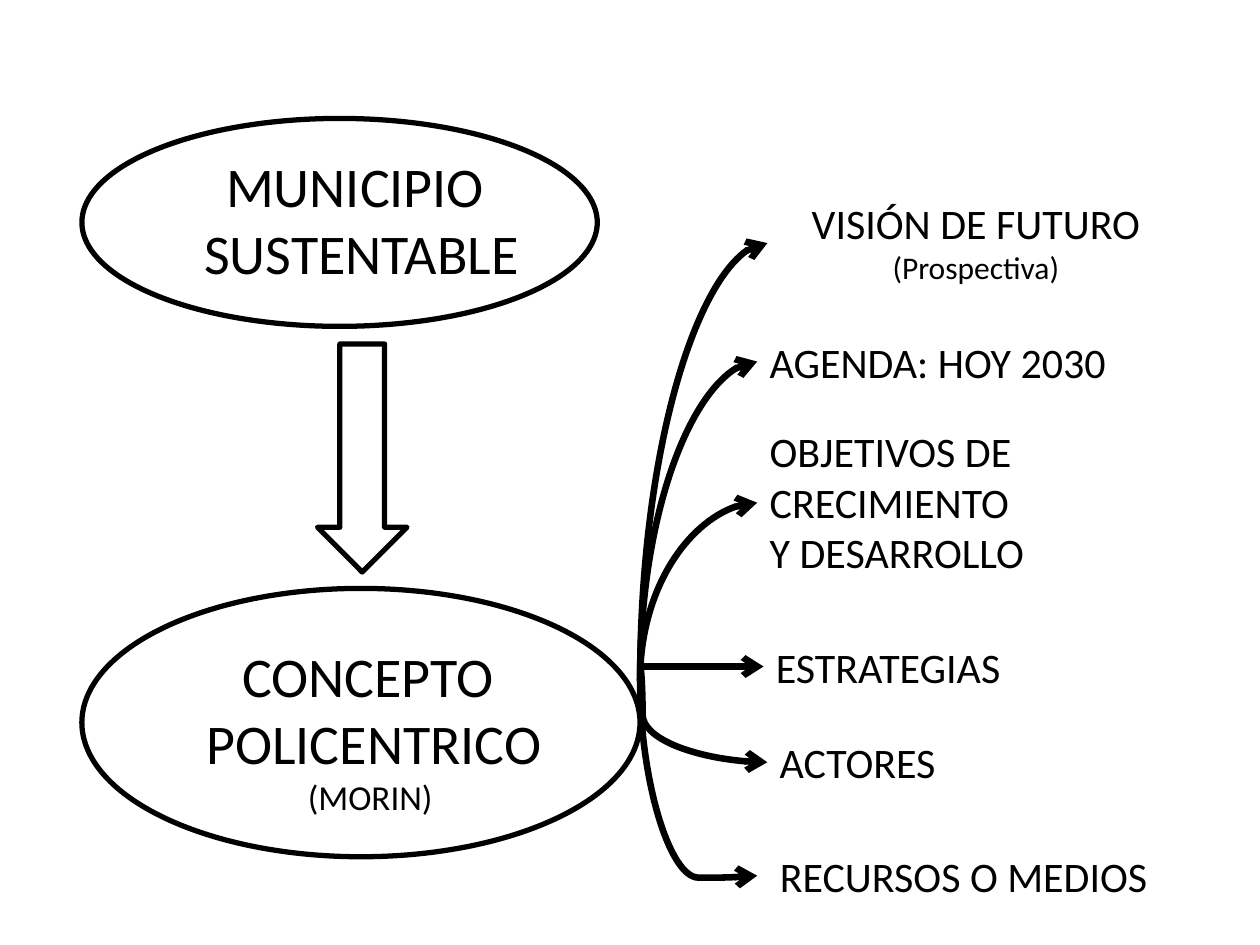
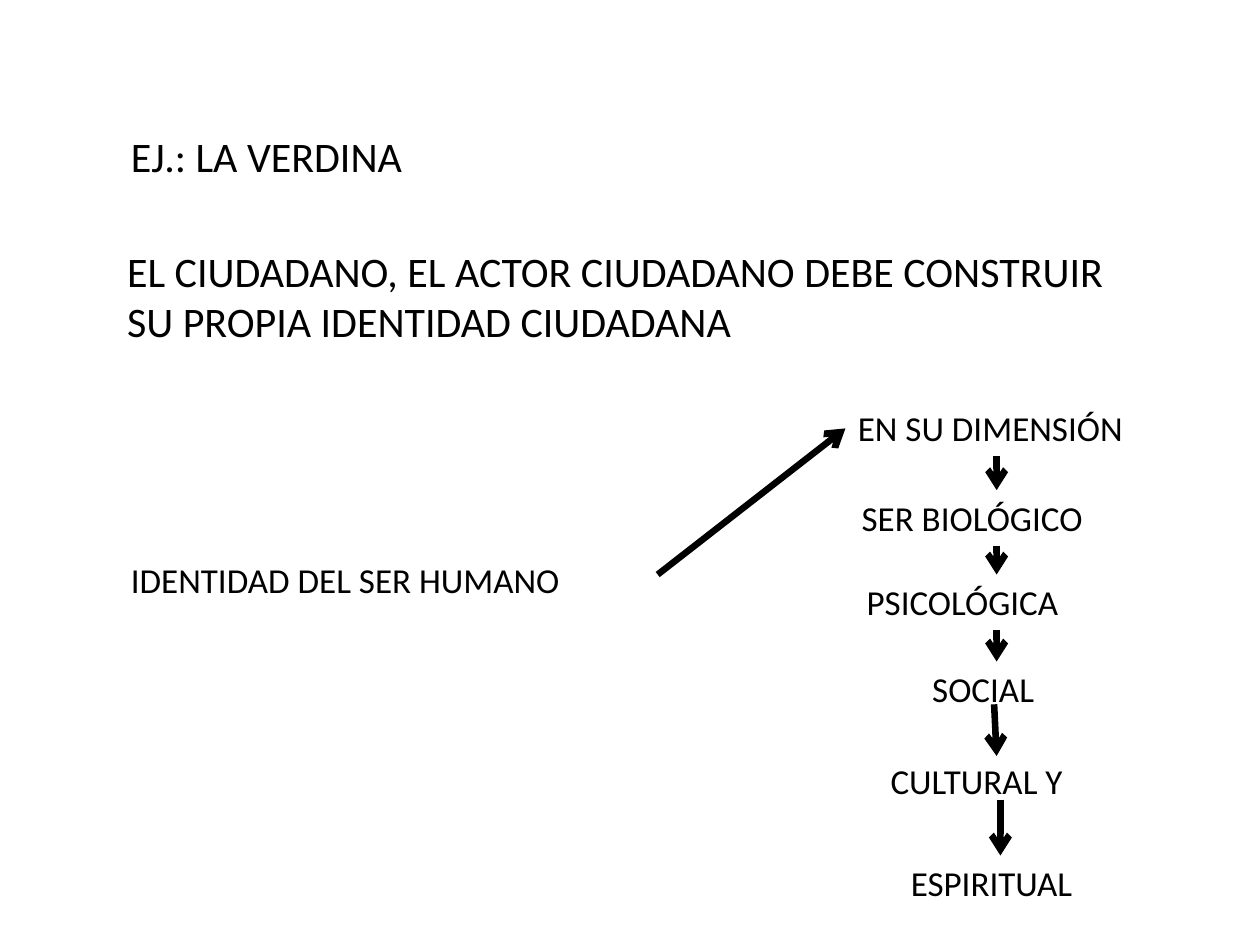
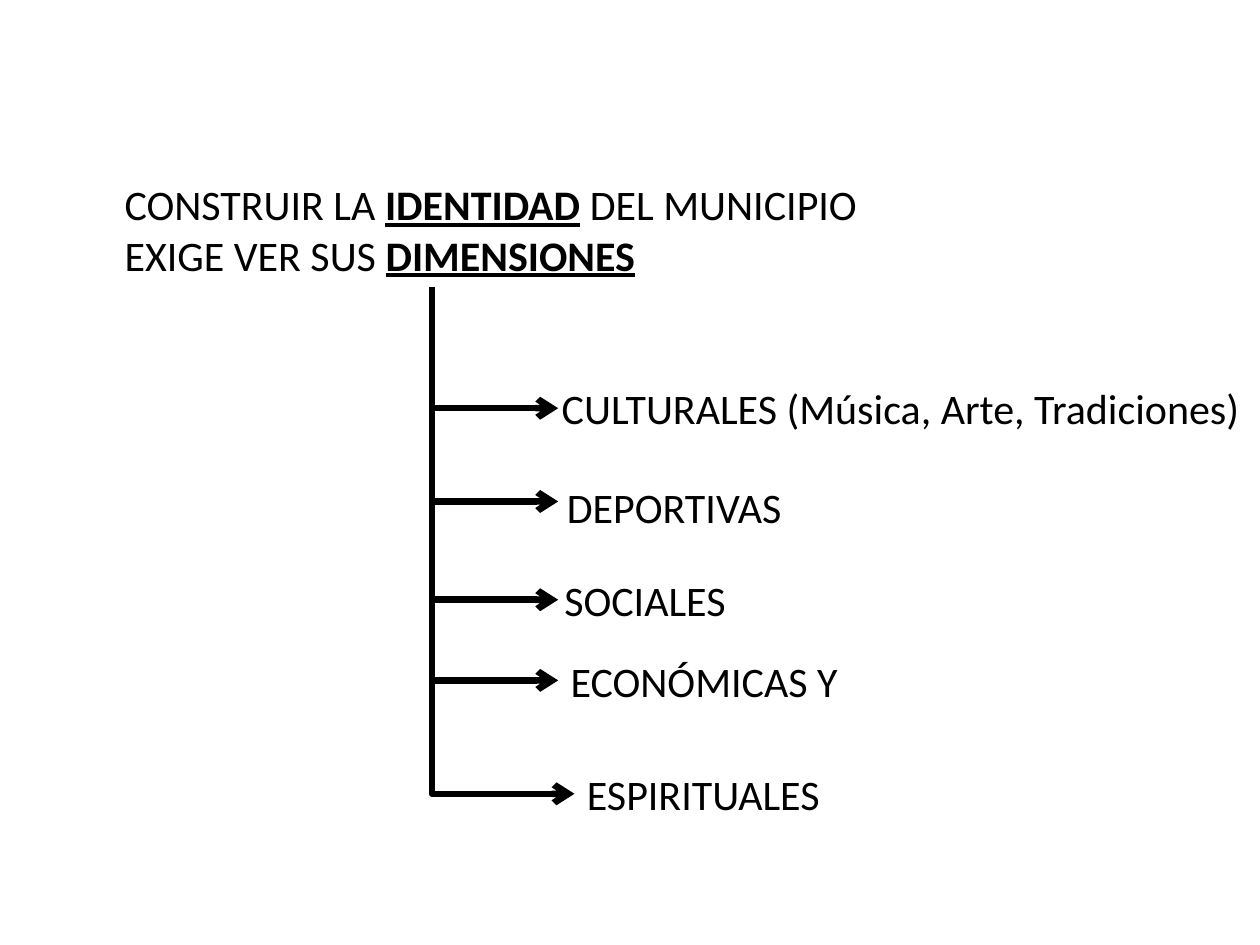
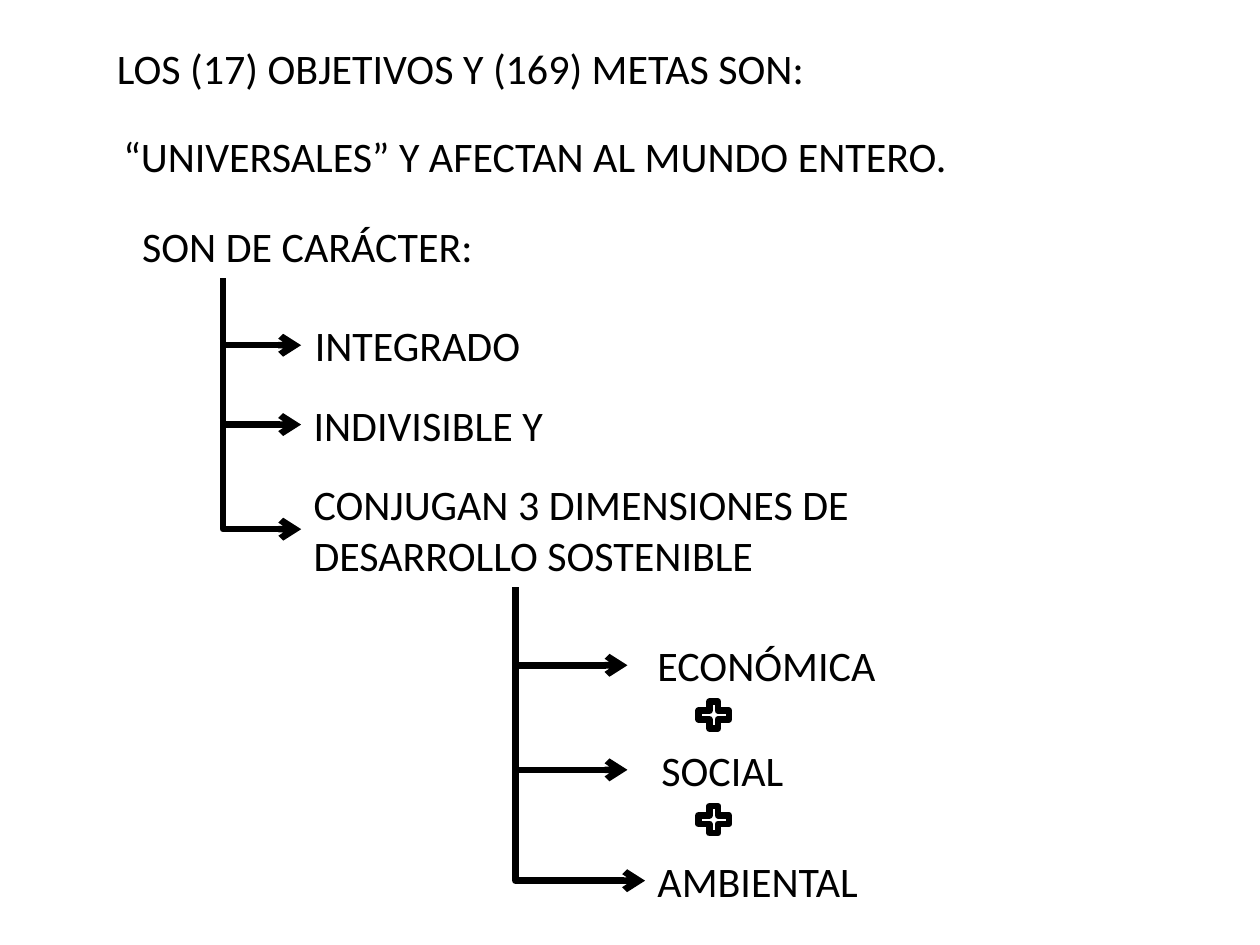
from dataclasses import dataclass

from lxml import etree
from pptx import Presentation
from pptx.dml.color import RGBColor
from pptx.enum.shapes import MSO_CONNECTOR, MSO_SHAPE
from pptx.enum.text import MSO_AUTO_SIZE, PP_ALIGN
from pptx.oxml.ns import qn
from pptx.shapes.connector import Connector
from pptx.slide import Slide
from pptx.util import Inches, Pt

COLORS = {"ink": "000000"}
FONT = "Calibri"
BODY, SMALL, LARGE = 24, 20, 32
OUTLINE, ARROW_LINE = 3, 3.75
BLANK_LAYOUT = 6

STRAIGHT, CURVE = MSO_CONNECTOR.STRAIGHT, MSO_CONNECTOR.CURVE
ELLIPSE, DOWN_ARROW, PLUS = MSO_SHAPE.OVAL, MSO_SHAPE.DOWN_ARROW, MSO_SHAPE.MATH_PLUS
LEFT, CENTER = PP_ALIGN.LEFT, PP_ALIGN.CENTER
FIT_SHAPE = MSO_AUTO_SIZE.SHAPE_TO_FIT_TEXT

Point = tuple[float, float]


@dataclass(frozen=True)
class Para:
    """A paragraph whose every second span is bold and underlined."""
    spans: tuple[str, ...]
    size: int = BODY


@dataclass(frozen=True)
class Label:
    """A text box; when it wraps, one paragraph takes a second line."""
    left: float
    top: float
    width: float
    paras: tuple[Para, ...]
    align: PP_ALIGN = LEFT
    wraps: bool = False

    @property
    def height(self) -> float:
        sizes = [para.size for para in self.paras]
        if self.wraps:
            sizes.append(sizes[0])
        return 0.1 + sum(sizes) * 1.2 / 72


@dataclass(frozen=True)
class Outline:
    kind: MSO_SHAPE
    left: float
    top: float
    width: float
    height: float
    weight: float = OUTLINE


@dataclass(frozen=True)
class Tree:
    """A trunk that bends into its last arrow, with side arrows above."""
    start: Point
    end: Point
    branch_tip: float
    branch_rows: tuple[float, ...]


def line(text: str, left: float, top: float, width: float, size: int = BODY) -> Label:
    return Label(left, top, width, (Para((text,), size),))


def draw_label(page: Slide, label: Label) -> None:
    box = page.shapes.add_textbox(Inches(label.left), Inches(label.top),
                                  Inches(label.width), Inches(label.height))
    frame = box.text_frame
    frame.word_wrap = label.wraps
    frame.auto_size = FIT_SHAPE
    for index, para in enumerate(label.paras):
        paragraph = frame.paragraphs[0] if index == 0 else frame.add_paragraph()
        paragraph.alignment = label.align
        paragraph.font.name = FONT
        paragraph.font.size = Pt(para.size)
        paragraph.font.color.rgb = RGBColor.from_string(COLORS["ink"])
        for position, text in enumerate(para.spans):
            span = paragraph.add_run()
            span.text = text
            if position % 2:
                span.font.bold = span.font.underline = True


def draw_outline(page: Slide, outline: Outline) -> None:
    shape = page.shapes.add_shape(outline.kind, Inches(outline.left), Inches(outline.top),
                                  Inches(outline.width), Inches(outline.height))
    shape.shadow.inherit = False
    shape.fill.background()
    shape.line.color.rgb = RGBColor.from_string(COLORS["ink"])
    shape.line.width = Pt(outline.weight)


def draw_arrow(page: Slide, start: Point, end: Point,
               kind: MSO_CONNECTOR = STRAIGHT, bend: float | None = None) -> Connector:
    """Draw an arrow; bend is where a curve turns, as a share of its length."""
    arrow = page.shapes.add_connector(kind, *(Inches(value) for value in (*start, *end)))
    arrow.line.color.rgb = RGBColor.from_string(COLORS["ink"])
    arrow.line.width = Pt(ARROW_LINE)
    properties = arrow.element.spPr
    etree.SubElement(properties.find(qn("a:ln")), qn("a:tailEnd"), type="arrow")
    etree.SubElement(properties, qn("a:effectLst"))
    if bend is not None:
        guides = properties.find(qn("a:prstGeom")).get_or_add_avLst()
        etree.SubElement(guides, qn("a:gd"), name="adj1", fmla=f"val {round(bend * 100000)}")
    return arrow


def draw_turning_arrow(page: Slide, start: Point, end: Point,
                       preset: str, bend: float | None = None) -> None:
    """Draw an arrow that leaves its start vertically and then turns right."""
    across, down = end[0] - start[0], end[1] - start[1]
    length = abs(down)
    left = (start[0] + end[0] - length) / 2
    top = (start[1] + end[1] - across) / 2
    arrow = draw_arrow(page, (left, top), (left + length, top + across), CURVE, bend)
    properties = arrow.element.spPr
    properties.find(qn("a:prstGeom")).set("prst", preset)
    frame = properties.find(qn("a:xfrm"))
    frame.set("rot", str((270 if down > 0 else 90) * 60000))
    frame.set("flipH", "1")
    if down < 0:
        frame.set("flipV", "1")


def draw_tree(page: Slide, tree: Tree) -> None:
    draw_turning_arrow(page, tree.start, tree.end, "bentConnector2")
    for row in tree.branch_rows:
        draw_arrow(page, (tree.start[0], row), (tree.branch_tip, row))


def draw_concept(page: Slide) -> None:
    labels = (
        Label(1.22, 1.15, 3.3, (Para(("MUNICIPIO ",), LARGE), Para(("SUSTENTABLE",), LARGE)),
              CENTER),
        Label(1.25, 5.04, 3.44, (Para(("CONCEPTO ",), LARGE), Para(("POLICENTRICO",), LARGE),
                                 Para(("(MORIN) ",), SMALL)), CENTER),
        Label(6.09, 1.52, 3.31, (Para(("VISIÓN DE FUTURO",)), Para(("(Prospectiva)",), 18)),
              CENTER),
        line("AGENDA: HOY 2030", 6.01, 2.62, 3.28),
        Label(6.01, 3.33, 3.99, (Para(("OBJETIVOS DE CRECIMIENTO",)),
                                 Para(("Y DESARROLLO",))), wraps=True),
        line("ESTRATEGIAS", 6.06, 5.04, 2.43),
        line("ACTORES", 6.09, 5.8, 1.73),
        line("RECURSOS O MEDIOS", 6.09, 6.7, 3.65),
    )
    for label in labels:
        draw_label(page, label)
    for outline in (Outline(ELLIPSE, 0.65, 0.94, 4.09, 1.65),
                    Outline(DOWN_ARROW, 2.52, 2.73, 0.71, 1.81),
                    Outline(ELLIPSE, 0.65, 4.67, 4.43, 2.13)):
        draw_outline(page, outline)
    hub, upper_hub = (5.08, 5.4), (5.08, 5.29)
    for tip in ((6.09, 1.93), (6.01, 2.87), (6.01, 3.99)):
        draw_turning_arrow(page, hub, tip, "curvedConnector2")
    draw_turning_arrow(page, hub, (6.01, 6.95), "curvedConnector3", 1.01)
    draw_arrow(page, upper_hub, (6.06, 5.29), CURVE, 0.5)
    draw_arrow(page, upper_hub, (6.09, 6.05), CURVE, 0.02)


def draw_citizen(page: Slide) -> None:
    labels = (
        line("EJ.: LA VERDINA", 0.94, 0.99, 2.87),
        Label(0.91, 1.9, 8.21, (Para(("EL CIUDADANO, EL ACTOR CIUDADANO DEBE CONSTRUIR "
                                      "SU PROPIA IDENTIDAD CIUDADANA",)),), wraps=True),
        line("IDENTIDAD DEL SER HUMANO", 0.94, 4.38, 4.28, SMALL),
        line("EN SU DIMENSIÓN", 6.71, 3.18, 2.72, SMALL),
        line("SER BIOLÓGICO", 6.74, 3.89, 2.33, SMALL),
        line("PSICOLÓGICA", 6.78, 4.56, 2.06, SMALL),
        line("SOCIAL", 7.3, 5.25, 1.22, SMALL),
        line("CULTURAL Y", 6.97, 5.98, 1.93, SMALL),
        line("ESPIRITUAL", 7.13, 6.79, 1.81, SMALL),
    )
    for label in labels:
        draw_label(page, label)
    draw_arrow(page, (5.22, 4.56), (6.71, 3.4))
    for top, bottom in ((3.62, 3.89), (4.33, 4.56), (5, 5.25)):
        draw_arrow(page, (7.91, top), (7.91, bottom))
    draw_arrow(page, (7.89, 5.59), (7.91, 6))
    draw_arrow(page, (7.94, 6.35), (7.94, 6.79))


def draw_identity(page: Slide) -> None:
    labels = (
        Label(0.89, 1.37, 6.07, (Para(("CONSTRUIR LA ", "IDENTIDAD",
                                       " DEL MUNICIPIO EXIGE VER SUS ", "DIMENSIONES")),),
              wraps=True),
        line("CULTURALES (Música, Arte, Tradiciones)", 4.36, 2.99, 5.63),
        line("DEPORTIVAS", 4.4, 3.77, 1.92),
        line("SOCIALES", 4.38, 4.51, 1.49),
        line("ECONÓMICAS Y", 4.43, 5.15, 2.34),
        line("ESPIRITUALES", 4.56, 6.05, 2.07),
    )
    for label in labels:
        draw_label(page, label)
    draw_tree(page, Tree((3.43, 2.28), (4.56, 6.3), 4.43, (3.24, 3.98, 4.76, 5.4)))


def draw_goals(page: Slide) -> None:
    labels = (
        line("LOS (17) OBJETIVOS Y (169) METAS SON:", 0.83, 0.29, 6.53),
        line("“UNIVERSALES” Y AFECTAN AL MUNDO ENTERO.", 0.88, 0.99, 8.05),
        line("SON DE CARÁCTER:", 1.03, 1.7, 3.38),
        line("INTEGRADO", 2.4, 2.49, 2.17),
        line("INDIVISIBLE Y", 2.39, 3.12, 2.52),
        Label(2.39, 3.75, 5.17, (Para(("CONJUGAN 3 DIMENSIONES DE",)),
                                 Para(("DESARROLLO SOSTENIBLE",)))),
        line("ECONÓMICA", 5.12, 5.03, 2.24),
        line("SOCIAL", 5.15, 5.86, 1.42),
        line("AMBIENTAL", 5.12, 6.74, 2.16),
    )
    for label in labels:
        draw_label(page, label)
    draw_tree(page, Tree((1.77, 2.21), (2.39, 4.2), 2.39, (2.74, 3.37)))
    draw_tree(page, Tree((4.09, 4.66), (5.12, 6.99), 4.98, (5.28, 6.11)))
    for top in (5.53, 6.36):
        draw_outline(page, Outline(PLUS, 5.5, top, 0.33, 0.29, ARROW_LINE))


def main() -> None:
    deck = Presentation()
    deck.slide_width, deck.slide_height = Inches(10), Inches(7.5)
    for draw_page in (draw_concept, draw_citizen, draw_identity, draw_goals):
        draw_page(deck.slides.add_slide(deck.slide_layouts[BLANK_LAYOUT]))
    deck.save("out.pptx")


if __name__ == "__main__":
    main()
